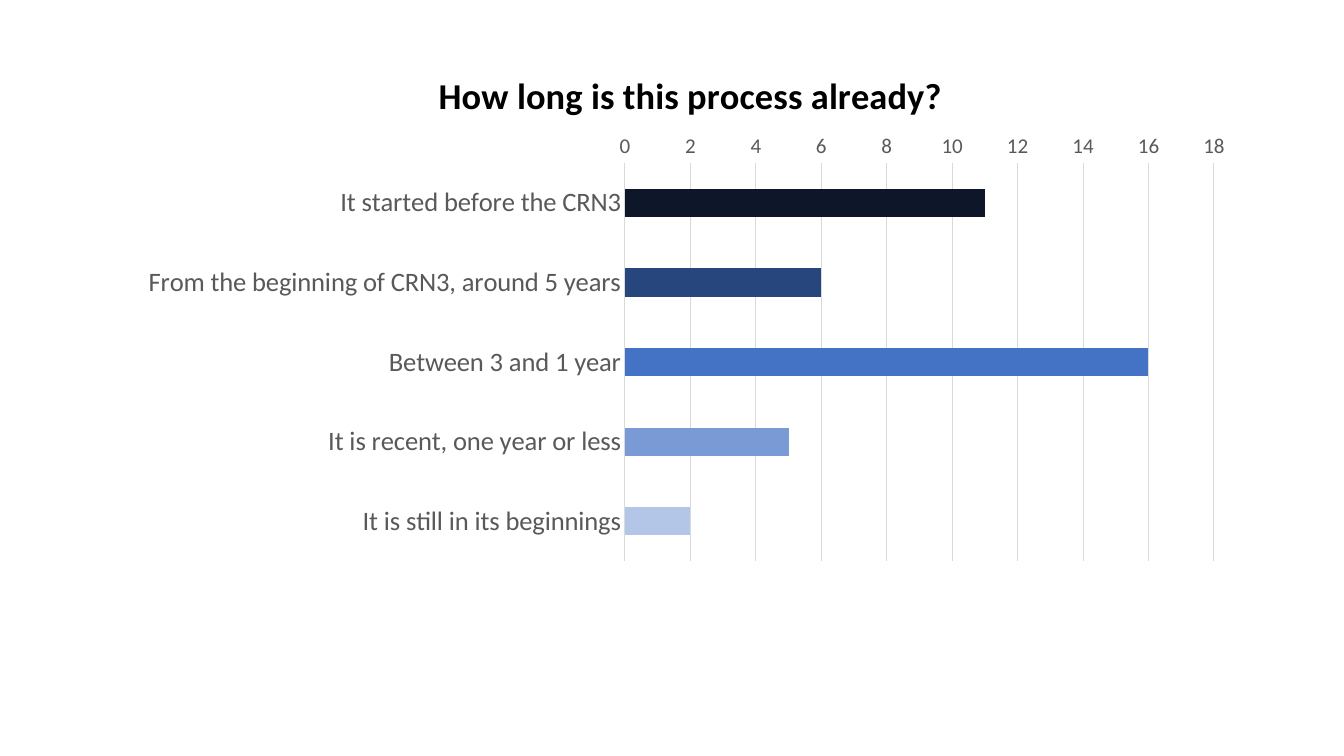
from pptx import Presentation
from pptx.chart.data import CategoryChartData
from pptx.dml.color import RGBColor
from pptx.enum.chart import XL_AXIS_CROSSES, XL_CHART_TYPE, XL_TICK_MARK
from pptx.oxml import parse_xml
from pptx.oxml.ns import nsdecls, qn
from pptx.util import Pt

BAR_CLUSTERED = XL_CHART_TYPE.BAR_CLUSTERED
NO_TICK = XL_TICK_MARK.NONE
AT_MAXIMUM = XL_AXIS_CROSSES.MAXIMUM

QUESTION = "How long is this process already?"
ANSWERS = [
    ("It started before the CRN3", 11, "before"),
    ("From the beginning of CRN3, around 5 years", 6, "five_years"),
    ("Between 3 and 1 year", 16, "three_years"),
    ("It is recent, one year or less", 5, "recent"),
    ("It is still in its beginnings", 2, "beginnings"),
]
COLORS = {
    "title": "000000",
    "label": "595959",
    "rule": "D9D9D9",
    "before": "0D1729",
    "five_years": "27467D",
    "three_years": "4472C4",
    "recent": "799AD5",
    "beginnings": "B3C6E7",
}
FONT = "Calibri"
SLIDE_SIZE = (1344, 756)
CHART_BOX = (104, 50, 1135, 643)
BARS_BOX = (625, 163, 589, 398)
TITLE_CORNER = (432, 64)
EMU_PER_PX = 914400 / 100.8


def emu(px):
    return round(px * EMU_PER_PX)


def rgb(name):
    return RGBColor.from_string(COLORS[name])


def apply(target, **values):
    for key, value in values.items():
        setattr(target, key, value)


def style_font(font, size, color, bold=False):
    apply(font, name=FONT, size=Pt(size), bold=bold)
    font.color.rgb = rgb(color)


def style_line(line):
    line.width = Pt(0.75)
    line.color.rgb = rgb("rule")


def place(parent, index, box, inner=False):
    for old in parent.findall(qn("c:layout")):
        parent.remove(old)
    left, top, width, height = CHART_BOX
    fractions = [(box[0] - left) / width, (box[1] - top) / height]
    if len(box) == 4:
        fractions += [box[2] / width, box[3] / height]
    keys = "xywh"[:len(box)]
    parts = '<c:layoutTarget val="inner"/>' if inner else ""
    parts += "".join(f'<c:{key}Mode val="edge"/>' for key in keys[:2])
    parts += "".join(f'<c:{key} val="{value:.3f}"/>' for key, value in zip(keys, fractions))
    parent.insert(index, parse_xml(
        f'<c:layout {nsdecls("c")}><c:manualLayout>{parts}</c:manualLayout></c:layout>'))


def main():
    deck = Presentation()
    deck.slide_width, deck.slide_height = map(emu, SLIDE_SIZE)
    slide = deck.slides.add_slide(deck.slide_layouts[6])

    answers = CategoryChartData()
    answers.categories = [label for label, _, _ in ANSWERS]
    answers.add_series("Series 1", [count for _, count, _ in ANSWERS])
    chart = slide.shapes.add_chart(BAR_CLUSTERED, *map(emu, CHART_BOX), answers).chart
    style_font(chart.font, 10, "title")
    chart.has_legend = False

    title = chart.chart_title
    title.text_frame.text = QUESTION
    style_font(title.text_frame.paragraphs[0].runs[0].font, 26, "title", True)
    title.include_in_layout = False
    place(title._element, 1, TITLE_CORNER)

    bars = chart.plots[0]
    apply(bars, gap_width=182, vary_by_categories=False)
    series = bars.series[0]
    series.format.fill.solid()
    series.format.fill.fore_color.rgb = rgb("three_years")
    for index, (_, _, color) in enumerate(ANSWERS):
        fill = series.points[index].format.fill
        fill.solid()
        fill.fore_color.rgb = rgb(color)

    answer_axis, count_axis = chart.category_axis, chart.value_axis
    for axis, size in ((answer_axis, 19), (count_axis, 15)):
        apply(axis, major_tick_mark=NO_TICK, minor_tick_mark=NO_TICK)
        style_font(axis.tick_labels.font, size, "label")
    apply(answer_axis, reverse_order=True, crosses=AT_MAXIMUM)
    style_line(answer_axis.format.line)
    apply(count_axis, minimum_scale=0, maximum_scale=18, major_unit=2,
          has_major_gridlines=True)
    count_axis.format.line.fill.background()
    style_line(count_axis.major_gridlines.format.line)

    place(chart._chartSpace.find(".//" + qn("c:plotArea")), 0, BARS_BOX, True)
    deck.save("out.pptx")


if __name__ == "__main__":
    main()
